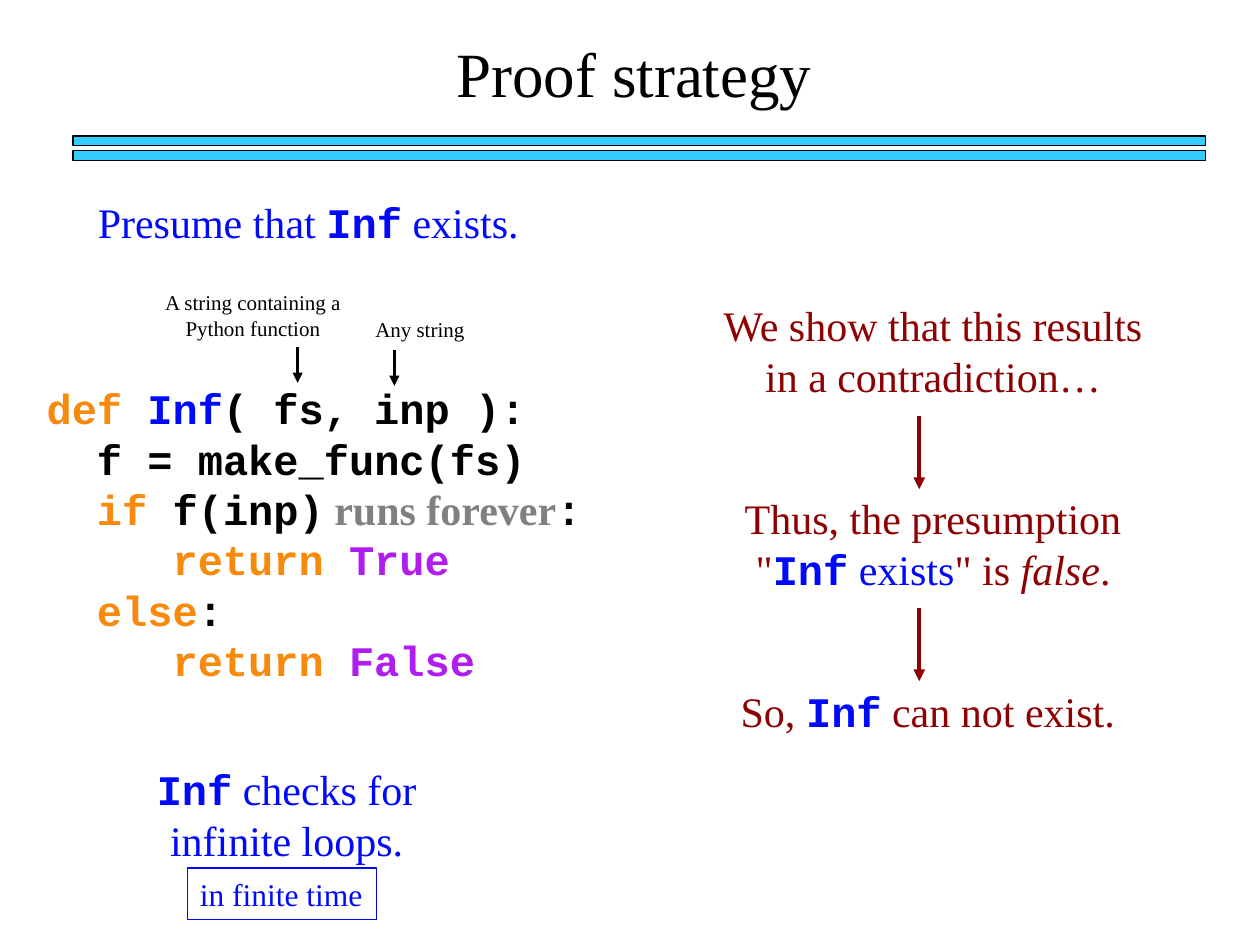
from dataclasses import dataclass

from lxml import etree
from pptx import Presentation
from pptx.dml.color import RGBColor
from pptx.enum import shapes, text
from pptx.oxml.ns import qn
from pptx.util import Cm, Pt


@dataclass(frozen=True)
class Theme:
    serif: str = "Times New Roman"
    mono: str = "Courier New"
    black: str = "000000"
    blue: str = "000AF9"
    red: str = "8E0103"
    orange: str = "F7890C"
    purple: str = "AF1EED"
    gray: str = "808080"
    cyan: str = "33CCFF"
    title: int = 36
    main: int = 24
    label: int = 18
    note: int = 12


T = Theme()
CHAR = 0.6 * T.main  # width of one monospaced character, in points
INF = ("Inf", dict(font=T.mono, color=T.blue, bold=True))


def rgb(color):
    return RGBColor.from_string(color)


def add_run(para, words, font=T.serif, size=T.main, color=T.black,
            bold=False, italic=False):
    run = para.add_run()
    run.text = words
    face = run.font
    face.name, face.size = font, Pt(size)
    face.bold, face.italic = bold, italic
    face.color.rgb = rgb(color)


def write(para, parts, align="CENTER", indent=0, **style):
    """Fill a paragraph with parts: plain strings or (string, format) pairs."""
    para.alignment = getattr(text.PP_ALIGN, align)
    if indent:
        para._p.get_or_add_pPr().set("marL", str(Pt(indent * CHAR)))
    for part in parts:
        words, extra = (part, {}) if isinstance(part, str) else part
        add_run(para, words, **{**style, **extra})


def place(shape, left, top, width, height):
    shape.left, shape.top = Cm(left), Cm(top)
    shape.width, shape.height = Cm(width), Cm(height)


def add_text(slide, box, *parts, **style):
    frame = slide.shapes.add_textbox(*map(Cm, box)).text_frame
    frame.word_wrap = True
    write(frame.paragraphs[0], parts, **style)
    return frame


def add_rect(slide, box, line, fill=None):
    rect = slide.shapes.add_shape(shapes.MSO_SHAPE.RECTANGLE, *map(Cm, box))
    rect.shadow.inherit = False
    if fill:
        rect.fill.solid()
        rect.fill.fore_color.rgb = rgb(fill)
    else:
        rect.fill.background()
    rect.line.color.rgb = rgb(line)
    rect.line.width = Pt(0.75)
    return rect


def add_arrow(slide, x, top, length, color, width):
    """Draw an arrow that points straight down."""
    arrow = slide.shapes.add_connector(
        shapes.MSO_CONNECTOR.STRAIGHT, Cm(x), Cm(top), Cm(x), Cm(top + length))
    arrow.line.color.rgb = rgb(color)
    arrow.line.width = Pt(width)
    props = arrow._element.spPr
    etree.SubElement(props.find(qn("a:ln")), qn("a:tailEnd"), type="triangle")
    etree.SubElement(props, qn("a:effectLst"))


def add_title(slide, words):
    title = slide.shapes.title
    place(title, 4.6, 0.56, 16.36, 1.78)
    frame = title.text_frame
    frame.auto_size = text.MSO_AUTO_SIZE.NONE
    frame.vertical_anchor = text.MSO_ANCHOR.TOP
    write(frame.paragraphs[0], [words], size=T.title)
    for top in (2.74, 3.04):
        add_rect(slide, (1.47, top, 22.83, 0.2), T.black, T.cyan)


def add_code(slide):
    key = dict(color=T.orange)
    value = dict(color=T.purple)
    lines = [
        (0, [("def ", key), INF, "( fs, inp ):"]),
        (2, ["f = make_func(fs)"]),
        (2, [("if", key), " f(inp)",
             (" runs forever", dict(font=T.serif, color=T.gray)), ":"]),
        (5, [("return ", key), ("True", value)]),
        (2, [("else", key), ":"]),
        (5, [("return ", key), ("False", value)]),
    ]
    style = dict(align="LEFT", font=T.mono, bold=True)
    indent, parts = lines[0]
    frame = add_text(slide, (0.69, 7.59, 11.58, 6.35), *parts,
                     indent=indent, **style)
    for indent, parts in lines[1:]:
        write(frame.add_paragraph(), parts, indent=indent, **style)


def add_notes(slide):
    add_text(slide, (3.07, 5.72, 4.06, 1.27),
             "A string containing a Python function", size=T.note)
    add_text(slide, (7.21, 6.25, 2.51, 0.76), "Any string", size=T.note)
    for x, top in ((6, 7), (7.95, 7.06)):
        add_arrow(slide, x, top, 0.72, T.black, 1.5)


def add_steps(slide):
    steps = [
        ["We show that this results in a contradiction…"],
        ["Thus, the presumption \"", INF, (" exists", dict(color=T.blue)),
         "\" is ", ("false", dict(italic=True)), "."],
        ["So, ", INF, " can not exist. "],
    ]
    for row, parts in enumerate(steps):
        height = 1.27 if row == 2 else 2.29
        add_text(slide, (14.2, 5.92 + 3.89 * row, 9.22, height), *parts,
                 color=T.red)
    for row in range(2):
        add_arrow(slide, 18.53, 8.38 + 3.87 * row, 1.48, T.red, 2.25)


def add_goal(slide):
    add_text(slide, (2.01, 15.27, 7.54, 2.29),
             INF, " checks for infinite loops.", color=T.blue)
    label = add_rect(slide, (3.78, 17.5, 3.81, 1.04), T.blue).text_frame
    label.word_wrap = False
    write(label.paragraphs[0], ["in finite time"], align="LEFT",
          size=T.label, color=T.blue)


def main():
    deck = Presentation()
    deck.slide_width, deck.slide_height = Cm(25.4), Cm(19.05)
    slide = deck.slides.add_slide(deck.slide_layouts[5])
    add_title(slide, "Proof strategy")
    add_text(slide, (1.3, 3.84, 9.83, 1.27),
             "Presume that ", INF, " exists.", color=T.blue)
    add_code(slide)
    add_notes(slide)
    add_steps(slide)
    add_goal(slide)
    deck.save("out.pptx")


if __name__ == "__main__":
    main()
